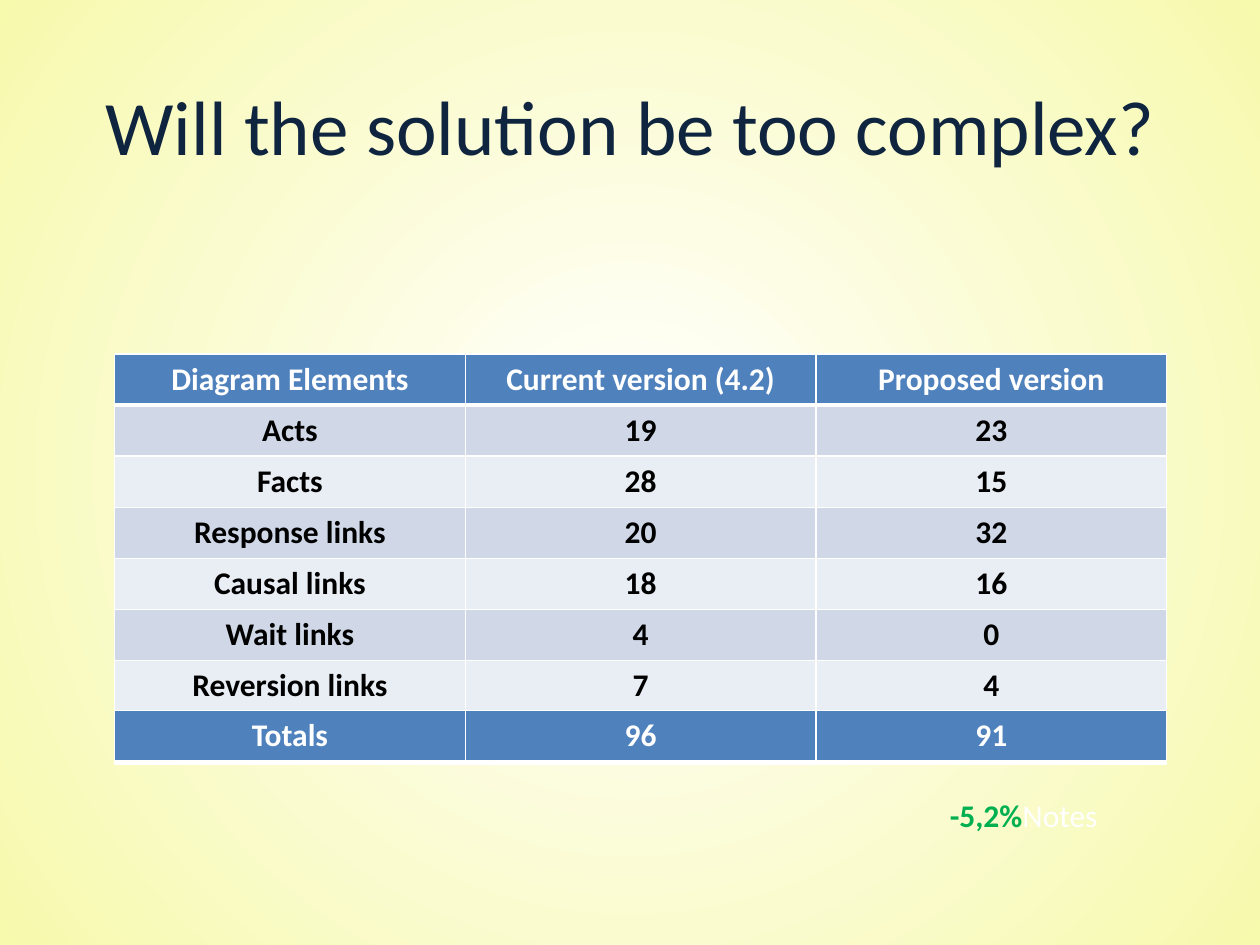
from lxml import etree
from pptx import Presentation
from pptx.dml.color import RGBColor
from pptx.enum import text
from pptx.oxml import ns, parse_xml
from pptx.util import Inches, Pt

WHITE = RGBColor(0xFF, 0xFF, 0xFF)
BLACK = RGBColor(0, 0, 0)
NAVY = RGBColor(0x0F, 0x24, 0x3E)
BLUE = RGBColor(0x4F, 0x81, 0xBD)
BAND_DARK = RGBColor(0xD0, 0xD8, 0xE8)
BAND_LIGHT = RGBColor(0xE9, 0xED, 0xF4)
GREEN = RGBColor(0x00, 0xB0, 0x50)
YELLOW = RGBColor(0xF7, 0xF9, 0xAD)

ELEMENTS = [
    ("Diagram Elements", "Current version (4.2)", "Proposed version"),
    ("Acts", "19", "23"),
    ("Facts", "28", "15"),
    ("Response links", "20", "32"),
    ("Causal links", "18", "16"),
    ("Wait links", "4", "0"),
    ("Reversion links", "7", "4"),
]
TOTALS = [("Totals", "96", "91")]


class SlideBuilder:
    body = {"name": "Calibri", "size": Pt(18), "bold": True}
    heading = {"name": "Calibri", "size": Pt(44), "bold": False}

    def __init__(self, slide):
        self.slide = slide

    def background(self, inner, outer):
        self.slide._element.cSld.insert(0, parse_xml(
            f'<p:bg {ns.nsdecls("p", "a")}><p:bgPr><a:gradFill rotWithShape="1"><a:gsLst>'
            f'<a:gs pos="0"><a:srgbClr val="{inner}"/></a:gs>'
            f'<a:gs pos="100000"><a:srgbClr val="{outer}"><a:alpha val="64000"/></a:srgbClr></a:gs>'
            '</a:gsLst><a:path path="circle">'
            '<a:fillToRect l="50000" t="50000" r="50000" b="50000"/></a:path></a:gradFill>'
            '<a:effectLst/></p:bgPr></p:bg>'))

    def run(self, paragraph, words, color, **changes):
        run = paragraph.add_run()
        run.text = words
        for key, value in {**self.body, **changes}.items():
            setattr(run.font, key, value)
        run.font.color.rgb = color

    def title(self, words, left, top, width, height):
        title = self.slide.shapes.title
        place = {"left": left, "top": top, "width": width, "height": height}
        for key, value in place.items():
            setattr(title, key, Inches(value))
        title.text_frame.vertical_anchor = text.MSO_ANCHOR.MIDDLE
        paragraph = title.text_frame.paragraphs[0]
        paragraph.alignment = text.PP_ALIGN.CENTER
        self.run(paragraph, words, NAVY, **self.heading)

    def label(self, parts, left, top, width, height):
        box = self.slide.shapes.add_textbox(*map(Inches, (left, top, width, height)))
        box.text_frame.word_wrap = True
        for words, color, bold in parts:
            self.run(box.text_frame.paragraphs[0], words, color, bold=bold)

    def borders(self, cell, bottom):
        properties = cell._tc.get_or_add_tcPr()
        for side, points in {"L": 1, "R": 1, "T": 1, "B": bottom}.items():
            line = etree.SubElement(properties, ns.qn(f"a:ln{side}"), w=str(Pt(points)))
            fill = etree.SubElement(line, ns.qn("a:solidFill"))
            etree.SubElement(fill, ns.qn("a:srgbClr"), val=str(WHITE))

    def table(self, rows, left, top, width, height):
        frame = self.slide.shapes.add_table(
            len(rows), len(rows[0]), *map(Inches, (left, top, width, height)))
        for r, row in enumerate(rows):
            strong = r == 0
            fill = BLUE if strong else BAND_DARK if r % 2 else BAND_LIGHT
            for c, words in enumerate(row):
                cell = frame.table.cell(r, c)
                self.borders(cell, 3 if strong else 1)
                cell.fill.solid()
                cell.fill.fore_color.rgb = fill
                paragraph = cell.text_frame.paragraphs[0]
                paragraph.alignment = text.PP_ALIGN.CENTER
                self.run(paragraph, words, WHITE if strong else BLACK)


def main():
    deck = Presentation()
    deck.slide_width, deck.slide_height = Inches(10), Inches(7.5)
    builder = SlideBuilder(deck.slides.add_slide(deck.slide_layouts[5]))
    builder.background(WHITE, YELLOW)
    builder.label([("-5,2%", GREEN, True), ("Notes", WHITE, False)], 7.44, 6.27, 1.57, 0.4)
    builder.title("Will the solution be too complex?", 0.2, 0.44, 9.61, 1.1)
    builder.table(ELEMENTS, 0.91, 2.81, 8.35, 2.84)
    builder.table(TOTALS, 0.91, 5.64, 8.35, 0.41)
    deck.save("out.pptx")


if __name__ == "__main__":
    main()
